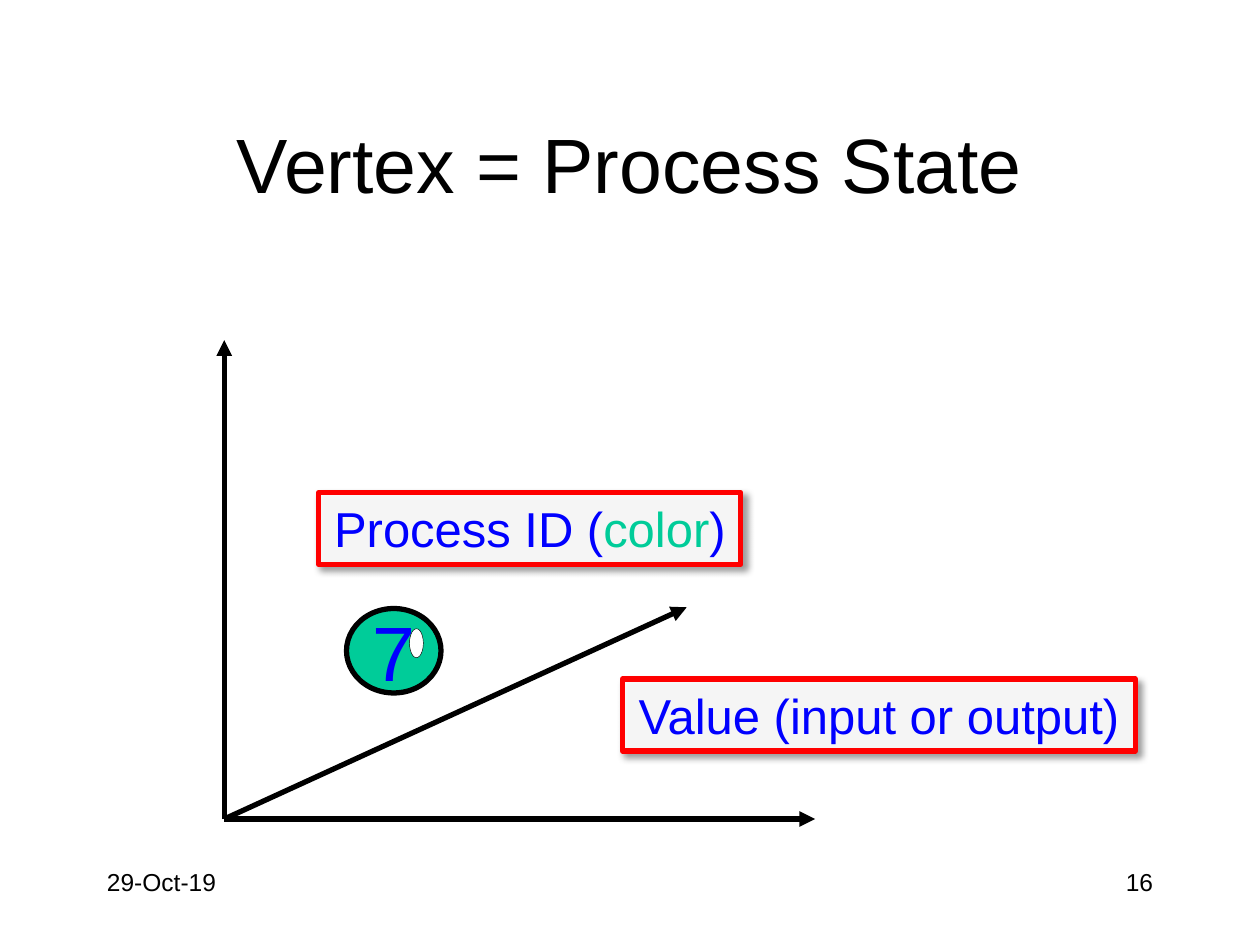
from lxml import etree
from pptx import Presentation
from pptx.dml.color import RGBColor
from pptx.enum.shapes import MSO_CONNECTOR, MSO_SHAPE
from pptx.enum.text import MSO_ANCHOR, MSO_AUTO_SIZE, PP_ALIGN
from pptx.oxml.ns import qn
from pptx.util import Inches, Pt

STRAIGHT = MSO_CONNECTOR.STRAIGHT
OVAL, RECTANGLE = MSO_SHAPE.OVAL, MSO_SHAPE.RECTANGLE
TOP, MIDDLE = MSO_ANCHOR.TOP, MSO_ANCHOR.MIDDLE
LEFT, CENTER, RIGHT = PP_ALIGN.LEFT, PP_ALIGN.CENTER, PP_ALIGN.RIGHT
GROW = MSO_AUTO_SIZE.SHAPE_TO_FIT_TEXT

BLACK = RGBColor(0x00, 0x00, 0x00)
WHITE = RGBColor(0xFF, 0xFF, 0xFF)
BLUE = RGBColor(0x00, 0x00, 0xFF)
GREEN = RGBColor(0x00, 0xCC, 0x99)
RED = RGBColor(0xFF, 0x00, 0x00)

FONT = "Arial"
WIDTH, HEIGHT = 10, 7.5
MARGIN = 0.75
ORIGIN = (1.78, 6.5)
AXIS_ENDS = [(1.78, 2.7), (6.47, 6.5), (5.45, 4.82)]


def inches(*lengths):
    return [Inches(length) for length in lengths]


def write_text(shape, *parts, size, align=LEFT, anchor=TOP, wrap=True):
    frame = shape.text_frame
    frame.word_wrap = wrap
    frame.vertical_anchor = anchor
    para = frame.paragraphs[0]
    para.alignment = align
    for text, color in parts:
        span = para.add_run()
        span.text = text
        span.font.name = FONT
        span.font.size = Pt(size)
        span.font.color.rgb = color


def add_title(page, text):
    title = page.shapes.title
    title.left, title.top, title.width, title.height = inches(
        MARGIN, 0.67, WIDTH - 2 * MARGIN, 1.25)
    write_text(title, (text, BLACK), size=44, align=CENTER, anchor=MIDDLE)


def add_footer(page, text, left, align):
    box = page.shapes.add_textbox(*inches(left, 6.83, 2.08, 0.5))
    write_text(box, (text, BLACK), size=14, align=align)


def add_axis(page, end):
    axis = page.shapes.add_connector(STRAIGHT, *inches(*ORIGIN, *end))
    axis.line.width = Pt(3)
    axis.line.color.rgb = BLACK
    etree.SubElement(axis.line._ln, qn("a:tailEnd"), type="triangle")
    etree.SubElement(axis._element.spPr, qn("a:effectLst"))


def add_figure(page, kind, place, fill, line, line_width):
    figure = page.shapes.add_shape(kind, *inches(*place))
    figure.shadow.inherit = False
    figure.fill.solid()
    figure.fill.fore_color.rgb = fill
    figure.line.color.rgb = line
    figure.line.width = Pt(line_width)
    return figure


def add_label(page, place, *parts):
    label = add_figure(page, RECTANGLE, place, WHITE, RED, 3)
    properties = label._element.spPr
    fill_color = properties.find(qn("a:solidFill"))[0]
    etree.SubElement(fill_color, qn("a:alpha"), val="90000")
    shadow = etree.SubElement(
        properties.find(qn("a:effectLst")), qn("a:outerShdw"),
        blurRad=str(Pt(4)), dist=str(Pt(3)), dir="2700000",
        algn="tl", rotWithShape="0")
    shadow_color = etree.SubElement(shadow, qn("a:srgbClr"), val=str(BLACK))
    etree.SubElement(shadow_color, qn("a:alpha"), val="40000")
    write_text(label, *parts, size=28, align=CENTER, wrap=False)
    label.text_frame.auto_size = GROW


def main():
    deck = Presentation()
    deck.slide_width, deck.slide_height = inches(WIDTH, HEIGHT)
    page = deck.slides.add_slide(deck.slide_layouts[5])

    add_footer(page, "29-Oct-19", MARGIN, LEFT)
    add_footer(page, "16", WIDTH - MARGIN - 2.08, RIGHT)
    add_title(page, "Vertex = Process State")
    for end in AXIS_ENDS:
        add_axis(page, end)

    vertex = add_figure(page, OVAL, (2.75, 4.83, 0.75, 0.67), GREEN, BLACK, 3)
    write_text(vertex, ("7", BLUE), size=44, align=CENTER, anchor=MIDDLE,
               wrap=False)
    add_figure(page, OVAL, (3.25, 4.99, 0.11, 0.23), WHITE, BLACK, 0.25)

    add_label(page, (2.53, 3.91, 3.35, 0.57),
              ("Process ID (", BLUE), ("color", GREEN), (")", BLUE))
    add_label(page, (4.94, 5.39, 4.07, 0.57),
              ("Value (input or output)", BLUE))
    deck.save("out.pptx")


if __name__ == "__main__":
    main()
